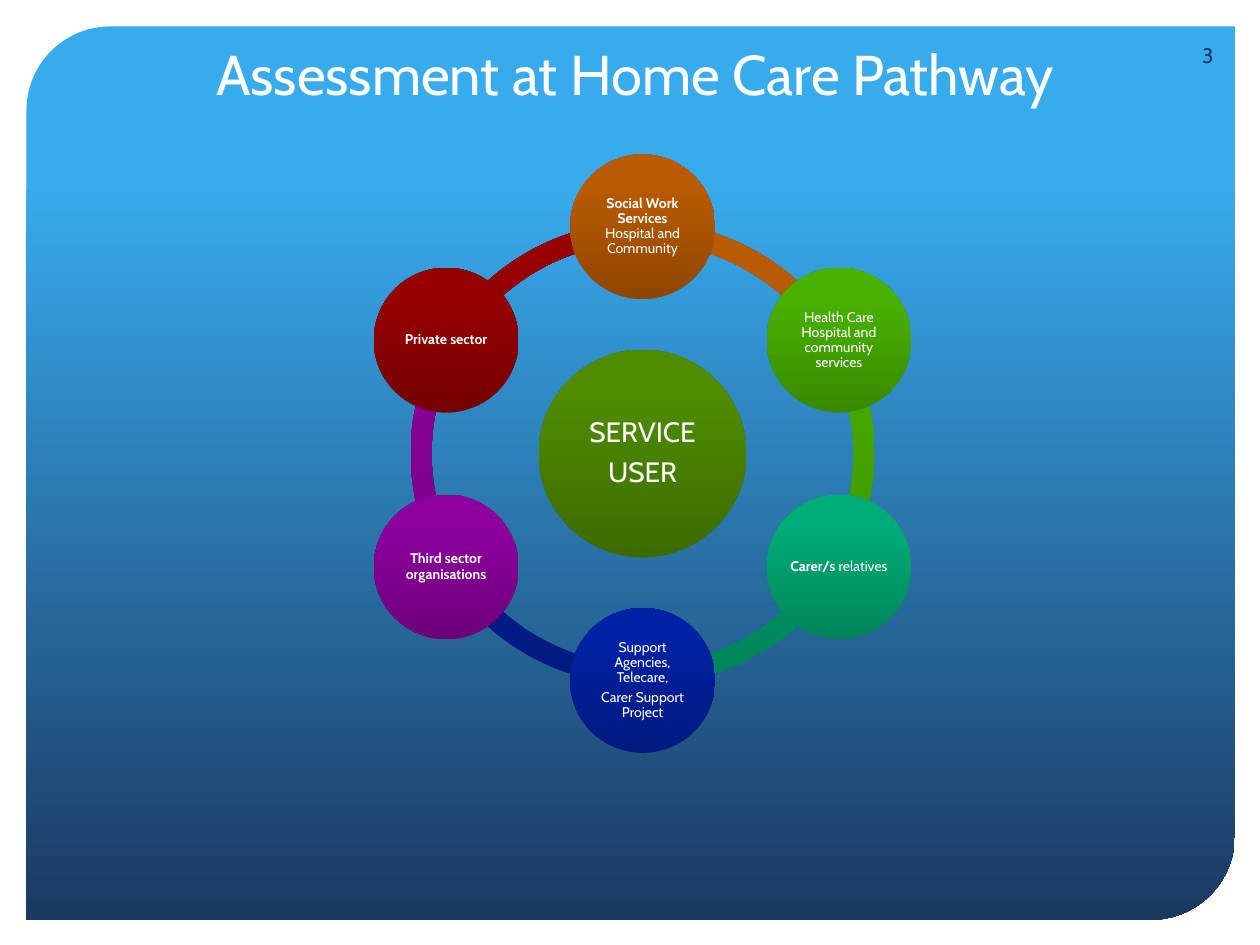
from math import cos, radians, sin

from pptx import Presentation
from pptx.dml.color import RGBColor
from pptx.enum.shapes import MSO_SHAPE
from pptx.enum.text import MSO_ANCHOR, MSO_AUTO_SIZE, PP_ALIGN
from pptx.util import Inches, Pt

PANEL = MSO_SHAPE.ROUND_2_DIAG_RECTANGLE
ARC = MSO_SHAPE.BLOCK_ARC
OVAL = MSO_SHAPE.OVAL
MIDDLE, BOTTOM = MSO_ANCHOR.MIDDLE, MSO_ANCHOR.BOTTOM
CENTER, RIGHT = PP_ALIGN.CENTER, PP_ALIGN.RIGHT
NO_AUTOFIT = MSO_AUTO_SIZE.NONE

WHITE = RGBColor(0xFF, 0xFF, 0xFF)
SKY = RGBColor(0x38, 0xAB, 0xED)
NAVY = RGBColor(0x1B, 0x38, 0x61)
OLIVE = (RGBColor(0x3D, 0x6B, 0x00), RGBColor(0x4F, 0x8C, 0x00))
ORANGE = (RGBColor(0x8F, 0x46, 0x00), RGBColor(0xB9, 0x5B, 0x00))
GREEN = (RGBColor(0x38, 0x89, 0x00), RGBColor(0x49, 0xB2, 0x00))
TEAL = (RGBColor(0x00, 0x84, 0x5B), RGBColor(0x00, 0xAC, 0x77))
BLUE = (RGBColor(0x00, 0x1A, 0x7F), RGBColor(0x00, 0x22, 0xA5))
PURPLE = (RGBColor(0x6D, 0x00, 0x7A), RGBColor(0x8D, 0x00, 0x9E))
RED = (RGBColor(0x74, 0x00, 0x01), RGBColor(0x97, 0x00, 0x01))

CENTER_X, CENTER_Y, ORBIT = 5.1, 3.6, 1.8
RING_SIZE, HUB_SIZE, NODE_SIZE = 3.68, 1.65, 1.15
RING_THICKNESS = 0.045
ANGLE_UNIT = 0.6

PARTNERS = [
    (ORANGE, [[("Social Work Services\v", True), ("Hospital and Community", False)]]),
    (GREEN, [[("Health Care\vHospital and community services", False)]]),
    (TEAL, [[("Carer/s", True), (" relatives", False)]]),
    (BLUE, [[("Support Agencies, Telecare,", False)], [("Carer Support Project", False)]]),
    (PURPLE, [[("Third sector organisations", True)]]),
    (RED, [[("Private sector", True)]]),
]
HUB_TEXT = [[("SERVICE", False)], [("USER", False)]]


class PathwaySlide:
    """Draws styled elements on the current slide."""

    font_name = "Cabin"

    def __init__(self, slide):
        self.slide = slide

    def add_text(self, paragraph, text, size, color, bold=False):
        for index, part in enumerate(text.split("\v")):
            if index:
                paragraph.add_line_break()
            if part:
                run = paragraph.add_run()
                run.text = part
                run.font.name = self.font_name
                run.font.size = Pt(size)
                run.font.bold = bold
                run.font.color.rgb = color

    def gradient_shape(self, kind, left, top, width, height, stops, angle):
        shape = self.slide.shapes.add_shape(
            kind, Inches(left), Inches(top), Inches(width), Inches(height))
        shape.shadow.inherit = False
        shape.line.fill.background()
        shape.fill.gradient()
        shape.fill.gradient_angle = angle
        for stop, (position, color) in zip(shape.fill.gradient_stops, stops):
            stop.position = position
            stop.color.rgb = color
        return shape

    def centered_shape(self, kind, x, y, size, shades):
        dark, light = shades
        return self.gradient_shape(kind, x - size / 2, y - size / 2, size, size,
                                   [(0, dark), (0.8, light)], 90)

    def panel(self):
        shape = self.gradient_shape(PANEL, 0.21, 0.21, 9.59, 7.09,
                                    [(0.17, SKY), (1, NAVY)], 270)
        shape.adjustments[0] = 0.094
        shape.adjustments[1] = 0
        self.slide.shapes.title.element.addprevious(shape.element)

    def title(self, text):
        title = self.slide.shapes.title
        title.left, title.top = Inches(0.54), Inches(0)
        title.width, title.height = Inches(9), Inches(0.9)
        frame = title.text_frame
        frame.auto_size = NO_AUTOFIT
        frame.vertical_anchor = BOTTOM
        paragraph = frame.paragraphs[0]
        paragraph.alignment = CENTER
        self.add_text(paragraph, text, 32, WHITE)

    def ring_arc(self, start, end, shades):
        shape = self.centered_shape(ARC, CENTER_X, CENTER_Y, RING_SIZE, shades)
        shape.adjustments[0] = start % 360 * ANGLE_UNIT
        shape.adjustments[1] = end % 360 * ANGLE_UNIT
        shape.adjustments[2] = RING_THICKNESS

    def circle(self, x, y, diameter, shades, paragraphs, size, inset):
        shape = self.centered_shape(OVAL, x, y, diameter, shades)
        frame = shape.text_frame
        frame.word_wrap = True
        frame.vertical_anchor = MIDDLE
        frame.margin_left = frame.margin_right = Inches(inset)
        frame.margin_top = frame.margin_bottom = Inches(inset)
        for index, runs in enumerate(paragraphs):
            paragraph = frame.add_paragraph() if index else frame.paragraphs[0]
            paragraph.alignment = CENTER
            paragraph.line_spacing = 0.9
            paragraph.space_after = Pt(size * 0.35)
            for text, bold in runs:
                self.add_text(paragraph, text, size, WHITE, bold)

    def page_number(self, text):
        box = self.slide.shapes.add_textbox(
            Inches(9.19), Inches(0.24), Inches(0.54), Inches(0.4))
        frame = box.text_frame
        frame.word_wrap = True
        frame.vertical_anchor = MIDDLE
        paragraph = frame.paragraphs[0]
        paragraph.alignment = RIGHT
        self.add_text(paragraph, text, 12, NAVY)


def main():
    presentation = Presentation()
    presentation.slide_width = Inches(10)
    presentation.slide_height = Inches(7.5)
    slide = presentation.slides.add_slide(presentation.slide_layouts[5])
    pathway = PathwaySlide(slide)
    pathway.panel()
    pathway.title("Assessment at Home Care Pathway")

    step = 360 / len(PARTNERS)
    angles = [270 + step * index for index in range(len(PARTNERS))]
    for angle, (shades, _) in reversed(list(zip(angles, PARTNERS))):
        pathway.ring_arc(angle, angle + step, shades)
    pathway.circle(CENTER_X, CENTER_Y, HUB_SIZE, OLIVE, HUB_TEXT, 16, 0.02)
    for angle, (shades, paragraphs) in zip(angles, PARTNERS):
        x = CENTER_X + ORBIT * cos(radians(angle))
        y = CENTER_Y + ORBIT * sin(radians(angle))
        pathway.circle(x, y, NODE_SIZE, shades, paragraphs, 8, 0.01)
    pathway.page_number("3")
    presentation.save("out.pptx")


if __name__ == "__main__":
    main()
